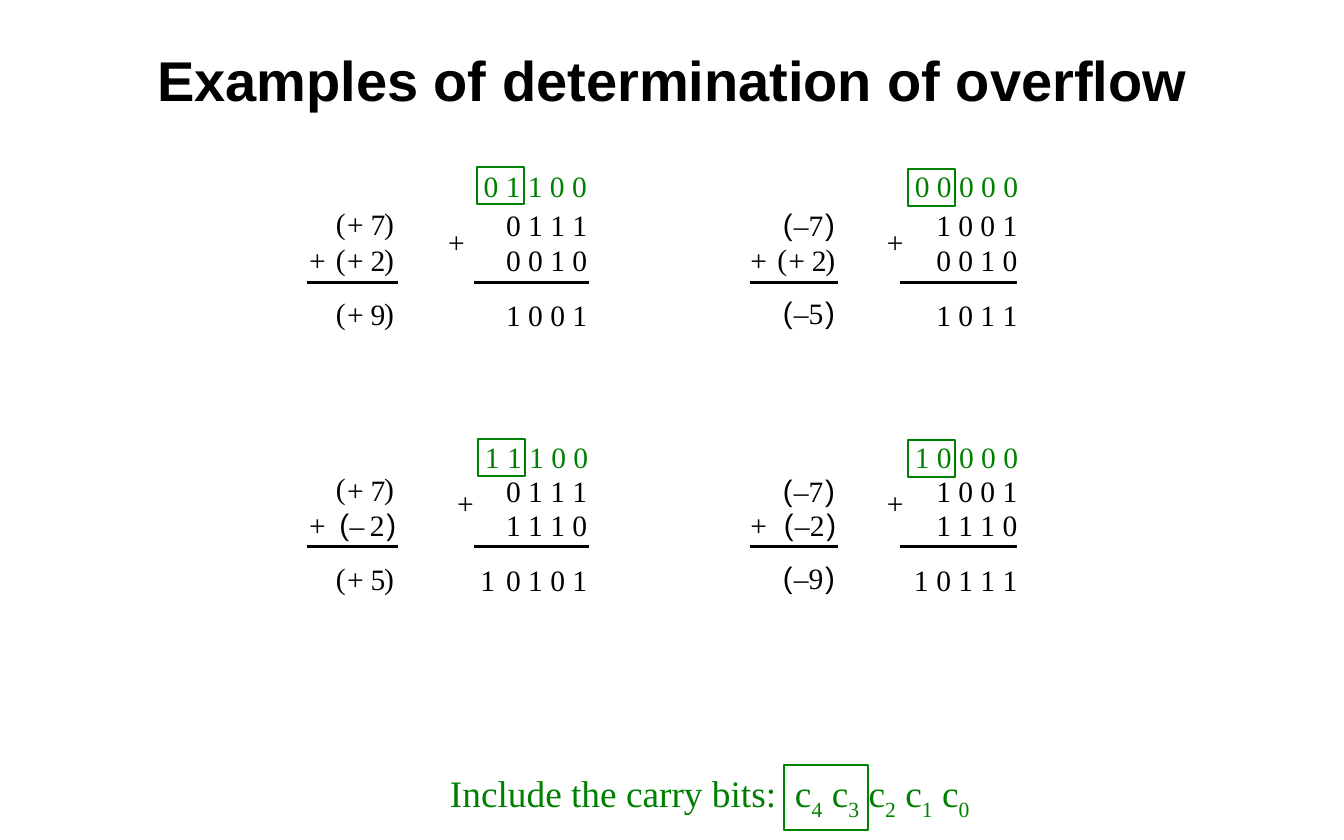
"""Build a slide with four binary additions and their overflow carry bits."""
from pptx import Presentation
from pptx.dml.color import RGBColor
from pptx.enum.shapes import MSO_CONNECTOR, MSO_SHAPE
from pptx.enum.text import MSO_ANCHOR, MSO_AUTO_SIZE, PP_ALIGN
from pptx.oxml.ns import qn
from pptx.util import Pt
from lxml.etree import SubElement

COLORS = {"ink": "000000", "carry": "008000"}
SERIF, SANS = "Times New Roman", "Arial"
CHAR_WIDTHS = {" ": 4.75, "(": 6.4, ")": 6.4, "+": 10.8}
SIGN_STYLES = {
    "+": (SERIF, (0, 7.2, 22.2, 31)),
    "–": (SANS, (0, 7, 16.6, 27.2)),
    "– ": (SANS, (0, 6.5, 19.5, 30.2)),
}
ROWS = [
    {"carry": 108, "plus": 144, "first": 133, "second": 155.5, "rule": 181.4, "sum": 190.8},
    {"carry": 282.2, "plus": 311.8, "first": 303.8, "second": 326.2, "rule": 351.4, "sum": 361.4},
]
COLUMNS = [
    {"sign": 198.7, "bits": 325.4, "rules": [(197.3, 255.6), (304.6, 378.7)]},
    {"sign": 482.4, "bits": 601.9, "rules": [(482.4, 538.6), (578.9, 653.8)]},
]
EXAMPLES = [
    {"row": 0, "column": 0, "carry": ("0 1 1 0 0", 311), "box": (306.7, 107.3), "plus": 288,
     "first": ("+", "7", 216, 132.5, "0 1 1 1"),
     "second": ("+", "2", 216, 155.5, "0 0 1 0"),
     "sum": ("+", "9", 216, 190.1, "1 0 0 1")},
    {"row": 0, "column": 1, "carry": ("0 0 0 0 0", 588.2), "box": (583.9, 108.7), "plus": 570.2,
     "first": ("–", "7", 503.3, 133.2, "1 0 0 1"),
     "second": ("+", "2", 499.7, 155.5, "0 0 1 0"),
     "sum": ("–", "5", 503.3, 189.4, "1 0 1 1")},
    {"row": 1, "column": 0, "carry": ("1 1 1 0 0", 311.8), "box": (307.4, 282.2), "plus": 293.8,
     "first": ("+", "7", 216, 303.1, "0 1 1 1"),
     "second": ("– ", "2", 218.2, 326.2, "1 1 1 0"),
     "sum": ("+", "5", 216, 360.7, "0 1 0 1"), "carry_out": 308.9},
    {"row": 1, "column": 1, "carry": ("1 0 0 0 0", 588.2), "box": (583.9, 283), "plus": 570.2,
     "first": ("–", "7", 503.3, 303.8, "1 0 0 1"),
     "second": ("–", "2", 504, 326.2, "1 1 1 0"),
     "sum": ("–", "9", 503.3, 360, "0 1 1 1"), "carry_out": 587.5},
]

deck = Presentation()
deck.slide_width, deck.slide_height = Pt(864), Pt(540)
slide = deck.slides.add_slide(deck.slide_layouts[5])
shapes = slide.shapes


def write(text, left, top, font=SERIF, color="ink"):
    width = sum(CHAR_WIDTHS.get(char, 9.5) for char in text)
    label = shapes.add_textbox(Pt(left), Pt(top), Pt(width), Pt(23))
    frame = label.text_frame
    margins = dict.fromkeys(("margin_left", "margin_top", "margin_right", "margin_bottom"), 0)
    for name, value in {**margins, "word_wrap": False,
                        "auto_size": MSO_AUTO_SIZE.SHAPE_TO_FIT_TEXT}.items():
        setattr(frame, name, value)
    run = frame.paragraphs[0].add_run()
    run.text = text
    run.font.name, run.font.size = font, Pt(19)
    run.font.color.rgb = RGBColor.from_string(COLORS[color])


def frame_carries(left, top, width, height):
    outline = shapes.add_shape(MSO_SHAPE.RECTANGLE, Pt(left), Pt(top), Pt(width), Pt(height))
    outline.shadow.inherit = False
    outline.fill.background()
    outline.line.color.rgb = RGBColor.from_string(COLORS["carry"])
    outline.line.width = Pt(1.5)


title = shapes.title
for name, value in {"left": 72, "top": 23.8, "width": 720, "height": 54}.items():
    setattr(title, name, Pt(value))
title.text_frame.text = "Examples of determination of overflow"
title.text_frame.vertical_anchor = MSO_ANCHOR.MIDDLE
title.text_frame.auto_size = MSO_AUTO_SIZE.NONE
heading = title.text_frame.paragraphs[0]
heading.alignment = PP_ALIGN.CENTER
for name, value in {"name": SANS, "size": Pt(36), "bold": True}.items():
    setattr(heading.runs[0].font, name, value)
heading.runs[0].font.color.rgb = RGBColor.from_string(COLORS["ink"])

for example in EXAMPLES:
    row, column = ROWS[example["row"]], COLUMNS[example["column"]]
    for part in ("first", "second", "sum"):
        sign, digit, left, top, bits = example[part]
        bracket_font, offsets = SIGN_STYLES[sign]
        for char, offset in zip(("(", sign.strip(), digit, ")"), offsets):
            if char in "()":
                write(char, left + offset, top - 0.7, bracket_font)
            else:
                write(char, left + offset, top)
        write(bits, column["bits"], row[part])
    write("+", column["sign"], row["second"])
    write("+", example["plus"], row["plus"])
    if "carry_out" in example:
        write("1", example["carry_out"], row["sum"])
    for start, end in column["rules"]:
        rule = shapes.add_connector(MSO_CONNECTOR.STRAIGHT, Pt(end), Pt(row["rule"]),
                                    Pt(start), Pt(row["rule"]))
        rule.line.color.rgb = RGBColor.from_string(COLORS["ink"])
        rule.line.width = Pt(1.88)
        SubElement(rule._element.spPr, qn("a:effectLst"))
    carries, carry_left = example["carry"]
    write(carries, carry_left, row["carry"], color="carry")
    frame_carries(*example["box"], 30.2, 23.8)

legend = shapes.add_textbox(Pt(282.2), Pt(491.8), Pt(355), Pt(36.7))
legend.text_frame.word_wrap = False
legend.text_frame.auto_size = MSO_AUTO_SIZE.SHAPE_TO_FIT_TEXT
legend_line = legend.text_frame.paragraphs[0]
for index in "43210":
    stem = "Include the carry bits:  c" if index == "4" else " c"
    for text, baseline in ((stem, 0), (index, -25000)):
        run = legend_line.add_run()
        run.text = text
        run.font.name, run.font.size = SERIF, Pt(24)
        run.font.color.rgb = RGBColor.from_string(COLORS["carry"])
        run._r.get_or_add_rPr().set("baseline", str(baseline))
frame_carries(504, 491.8, 54, 41.8)

deck.save("out.pptx")
